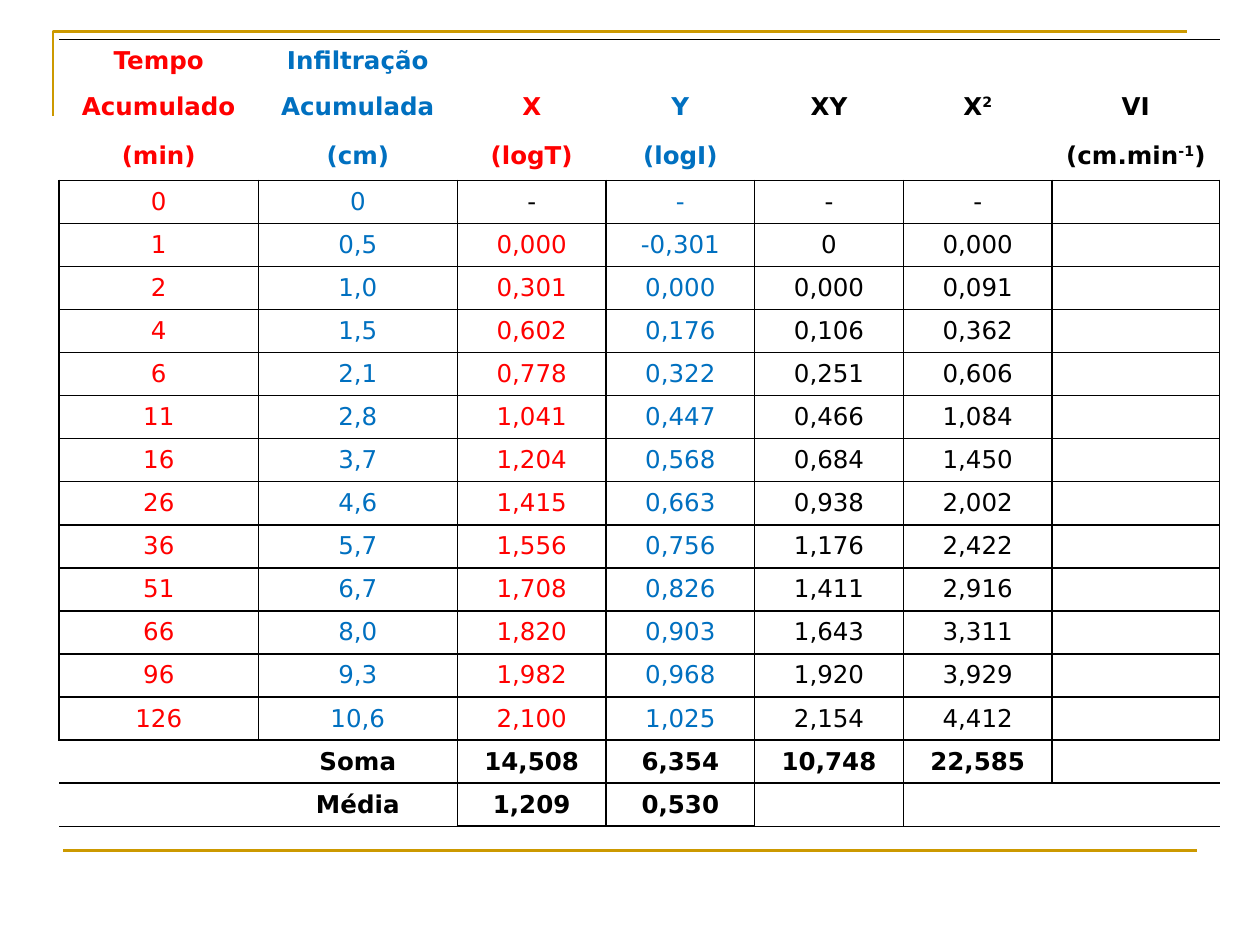
from lxml import etree
from pptx import Presentation
from pptx.dml.color import RGBColor
from pptx.enum import text
from pptx.oxml import ns
from pptx.util import Inches, Pt

GOLD = RGBColor(0xCC, 0x99, 0x00)
RED = RGBColor(0xFF, 0x00, 0x00)
BLUE = RGBColor(0x00, 0x70, 0xC0)
BLACK = RGBColor(0x00, 0x00, 0x00)
NO_GRID = "{2D5ABB26-0587-4C30-8999-92F81FD0307C}"

# A caret opens and closes a superscript.
HEAD = [
    "Tempo;Infiltração;;;;;",
    "Acumulado;Acumulada;X;Y;XY;X^2^;VI",
    "(min);(cm);(logT);(logI);;;(cm.min^-1^)",
]
DATA = [
    "0;0;-;-;-;-;",
    "1;0,5;0,000;-0,301;0;0,000;",
    "2;1,0;0,301;0,000;0,000;0,091;",
    "4;1,5;0,602;0,176;0,106;0,362;",
    "6;2,1;0,778;0,322;0,251;0,606;",
    "11;2,8;1,041;0,447;0,466;1,084;",
    "16;3,7;1,204;0,568;0,684;1,450;",
    "26;4,6;1,415;0,663;0,938;2,002;",
    "36;5,7;1,556;0,756;1,176;2,422;",
    "51;6,7;1,708;0,826;1,411;2,916;",
    "66;8,0;1,820;0,903;1,643;3,311;",
    "96;9,3;1,982;0,968;1,920;3,929;",
    "126;10,6;2,100;1,025;2,154;4,412;",
]
TOTALS = [
    ";Soma;14,508;6,354;10,748;22,585;",
    ";Média;1,209;0,530;;;",
]
ROWS = [line.split(";") for line in HEAD + DATA + TOTALS]
WIDTHS = [1.58, 1.58, 1.18, 1.18, 1.18, 1.18, 1.33]
COLORS = [RED, BLUE, RED, BLUE, BLACK, BLACK, BLACK]
FIRST, SUM = len(HEAD), len(HEAD) + len(DATA)
LAST = len(ROWS) - 1


def boxed(r, c):
    """Tell whether a cell has a line on all four sides."""
    if not (FIRST <= r <= LAST and 0 <= c < len(WIDTHS)):
        return False
    return r < SUM or (c >= 2 and ROWS[r][c] != "")


def edge(cell, side, width):
    line = etree.SubElement(cell._tc.get_or_add_tcPr(), ns.qn(f"a:ln{side}"), w=str(Pt(width)))
    fill = etree.SubElement(line, ns.qn("a:solidFill"))
    etree.SubElement(fill, ns.qn("a:srgbClr"), val=str(BLACK))


prs = Presentation()
prs.slide_width, prs.slide_height = Inches(10), Inches(7.5)
slide = prs.slides.add_slide(prs.slide_layouts[6])

# Gold frame
pen = slide.shapes.build_freeform(Inches(0.42), Inches(0.92))
pen.add_line_segments([(Inches(0.42), Inches(0.25)), (Inches(9.42), Inches(0.25))], close=False)
corner = pen.convert_to_shape()
corner.fill.background()
corner.shadow.inherit = False
rule = slide.shapes.add_connector(1, Inches(0.5), Inches(6.75), Inches(9.5), Inches(6.75))
for shape in (corner, rule):
    shape.line.color.rgb = GOLD
    shape.line.width = Pt(1.5)
etree.SubElement(rule._element.spPr, ns.qn("a:effectLst"))

# Table
frame = slide.shapes.add_table(
    len(ROWS), len(WIDTHS), Inches(0.47), Inches(0.31), Inches(9.22), Inches(6.25))
table = frame.table
table.first_row = table.horz_banding = False
table._tbl.tblPr.find(ns.qn("a:tableStyleId")).text = NO_GRID
for col, width in zip(table.columns, WIDTHS):
    col.width = Inches(width)
tall = (1, 2)
low = (6.25 - 0.39 * len(tall)) / (len(ROWS) - len(tall))
for r, row in enumerate(table.rows):
    row.height = Inches(0.39 if r in tall else low)

for r, row in enumerate(ROWS):
    for c, words in enumerate(row):
        cell = table.cell(r, c)
        cell.margin_left = cell.margin_right = cell.margin_top = cell.margin_bottom = 0
        cell.vertical_anchor = text.MSO_ANCHOR.MIDDLE
        para = cell.text_frame.paragraphs[0]
        para.alignment = text.PP_ALIGN.CENTER
        para.font.name = "DejaVu Sans"
        para.font.size = Pt(14)
        para.font.bold = not FIRST <= r < SUM
        para.font.color.rgb = BLACK if r >= SUM or (r, c) == (FIRST, 2) else COLORS[c]
        for i, part in enumerate(words.split("^")):
            if part:
                run = para.add_run()
                run.text = part
                if i % 2:
                    run._r.get_or_add_rPr().set("baseline", "30000")
        near = {"L": (r, c - 1), "R": (r, c + 1), "T": (r - 1, c), "B": (r + 1, c)}
        for side, other in near.items():
            if boxed(r, c) or boxed(*other):
                edge(cell, side, 1)
            elif (r, side) in ((0, "T"), (LAST, "B")):
                edge(cell, side, 0.5)
        cell.fill.background()

prs.save("out.pptx")
